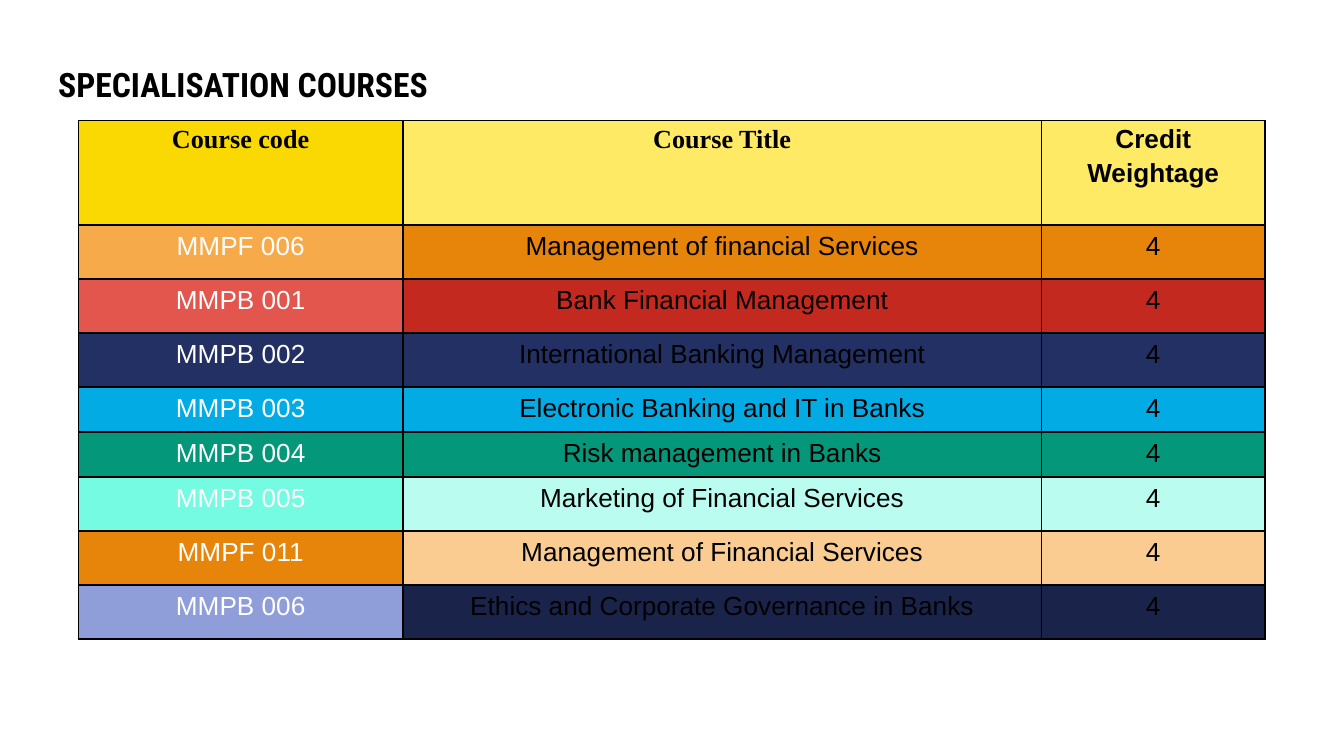
import pptx
import pptx.dml.color
import pptx.enum.text
import pptx.oxml
import pptx.oxml.ns
import pptx.util
from pptx.util import Cm

COLUMN_WIDTHS = [6.14, 12.06, 4.23]
ROW_HEIGHTS = [1.97, 1.02, 1.02, 1.02, 0.81, 0.84, 1.02, 1.02, 1.02]
HEADERS = [
    ("Course code", "Times New Roman", "FAD902"),
    ("Course Title", "Times New Roman", "FEEA65"),
    ("Credit Weightage", "Arial", "FEEA65"),
]
COURSES = [
    ("MMPF 006", "Management of financial Services", "F7AA49", "E6850A", 13),
    ("MMPB 001", "Bank Financial Management", "E2564E", "C42920", 13),
    ("MMPB 002", "International Banking Management", "223064", "223064", 13),
    ("MMPB 003", "Electronic Banking and IT in Banks", "02ABE4", "02ABE4", 13),
    ("MMPB 004", "Risk management in Banks", "04977A", "04977A", 13),
    ("MMPB 005", "Marketing of Financial Services", "75FBE1", "BAFDF0", 100),
    ("MMPF 011", "Management of Financial Services", "E6850A", "FACC92", 100),
    ("MMPB 006", "Ethics and Corporate Governance in Banks", "8F9ED9", "1A244B", 13),
]
CREDITS = "4"


def set_color(fill, color, alpha=100):
    fill.solid()
    fill.fore_color.rgb = pptx.dml.color.RGBColor.from_string(color)
    if alpha < 100:
        clr = fill._xPr.find(".//" + pptx.oxml.ns.qn("a:srgbClr"))
        clr.append(pptx.oxml.parse_xml(
            f'<a:alpha {pptx.oxml.ns.nsdecls("a")} val="{alpha * 1000}"/>'))


def write_text(tf, text, font="Arial", size=14, color="000000", bold=False,
               align="CENTER", spacing=1.0):
    tf.word_wrap = True
    p = tf.paragraphs[0]
    p.alignment = getattr(pptx.enum.text.PP_ALIGN, align)
    p.line_spacing = spacing
    r = p.add_run()
    r.text = text
    r.font.name = font
    r.font.size = pptx.util.Pt(size)
    r.font.bold = bold
    set_color(r.font.fill, color)


class SlideBuilder:
    """Holds the style and the current slide, and adds elements to it."""

    border_color = "000000"
    border_width = pptx.util.Pt(1)
    title_font = "Roboto Condensed"

    def __init__(self, s):
        self.s = s

    def title(self, text, left, top, width, height):
        sp = self.s.shapes.add_textbox(Cm(left), Cm(top), Cm(width), Cm(height))
        tf = sp.text_frame
        tf.margin_top = tf.margin_bottom = 0
        write_text(tf, text, font=self.title_font, size=18, bold=True, align="LEFT")

    def table(self, left, top, widths, heights):
        sp = self.s.shapes.add_table(
            len(heights), len(widths), Cm(left), Cm(top),
            Cm(sum(widths)), Cm(sum(heights)))
        for column, width in zip(sp.table.columns, widths):
            column.width = Cm(width)
        for row, height in zip(sp.table.rows, heights):
            row.height = Cm(height)
        return sp.table

    def cell(self, cell, text, fill, alpha=100, margins=(0.25, 0.13), **text_format):
        cell.margin_left = cell.margin_right = Cm(margins[0])
        cell.margin_top = cell.margin_bottom = Cm(margins[1])
        tc_pr = cell._tc.get_or_add_tcPr()
        for side in "LRTB":
            tc_pr.append(pptx.oxml.parse_xml(
                f'<a:ln{side} {pptx.oxml.ns.nsdecls("a")} w="{self.border_width}">'
                f'<a:solidFill><a:srgbClr val="{self.border_color}"/></a:solidFill>'
                f'</a:ln{side}>'))
        set_color(cell.fill, fill, alpha)
        write_text(cell.text_frame, text, **text_format)


def main():
    prs = pptx.Presentation()
    prs.slide_width, prs.slide_height = Cm(25.4), Cm(14.29)
    s = prs.slides.add_slide(prs.slide_layouts[6])
    builder = SlideBuilder(s)
    builder.title("SPECIALISATION COURSES", 0.85, 1.21, 23.92, 1.8)
    table = builder.table(1.48, 2.28, COLUMN_WIDTHS, ROW_HEIGHTS)
    for col, (text, font, fill) in enumerate(HEADERS):
        builder.cell(table.cell(0, col), text, fill, margins=(0.19, 0),
                     font=font, bold=True, spacing=1.15)
    for row, (code, name, code_fill, fill, alpha) in enumerate(COURSES, 1):
        builder.cell(table.cell(row, 0), code, code_fill, color="FFFFFF")
        for col, text in enumerate((name, CREDITS), 1):
            builder.cell(table.cell(row, col), text, fill, alpha)
    prs.save("out.pptx")


if __name__ == "__main__":
    main()
